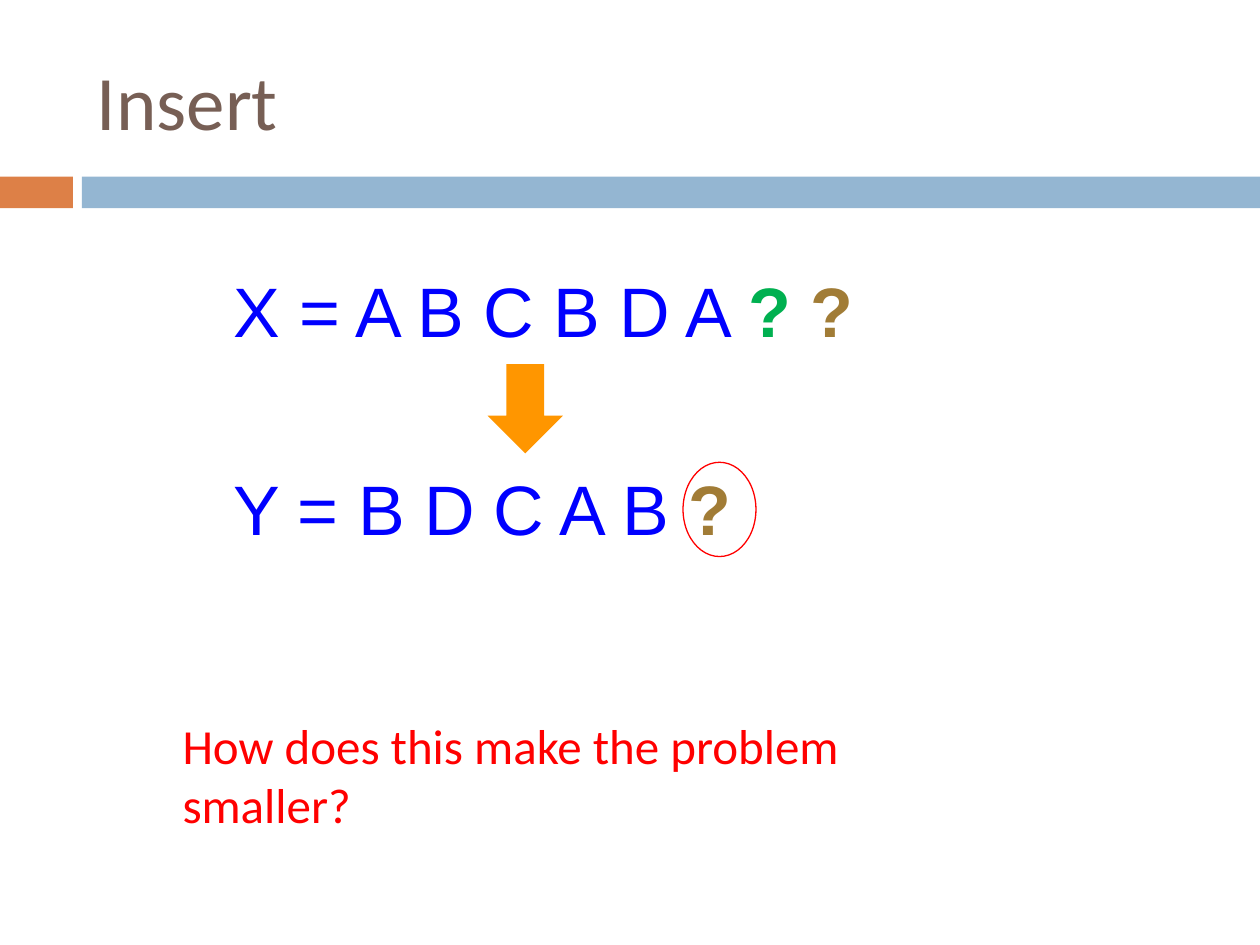
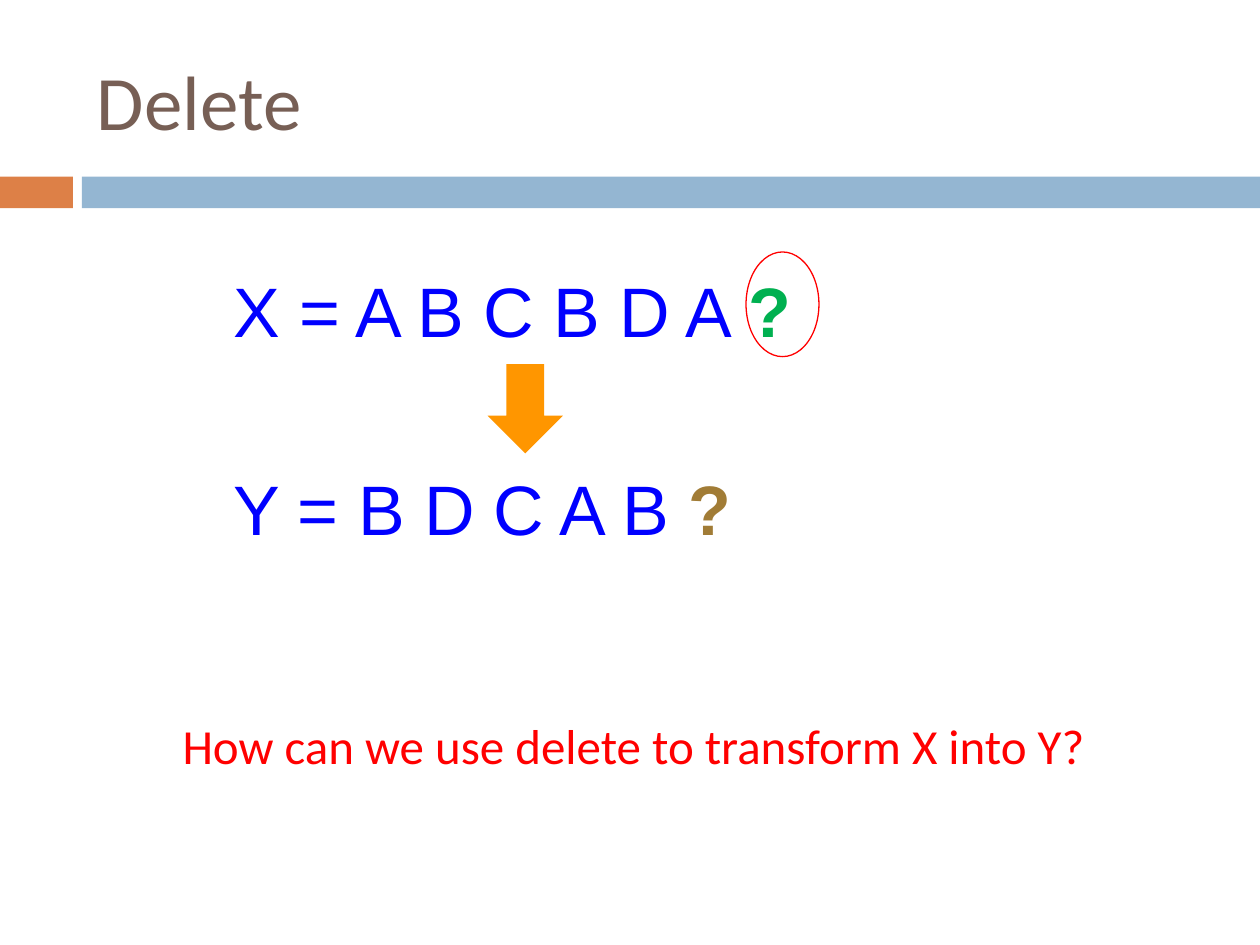
from dataclasses import dataclass

from pptx import Presentation
from pptx.dml.color import RGBColor
from pptx.enum.shapes import MSO_SHAPE
from pptx.enum.text import MSO_ANCHOR, MSO_AUTO_SIZE, PP_ALIGN
from pptx.util import Cm, Pt

COLORS = {
    "title": "775F55",
    "orange": "DD8047",
    "blue": "94B6D2",
    "letters": "0000FF",
    "green": "00B050",
    "brown": "A17C36",
    "arrow": "FF9600",
    "red": "FF0000",
}
TITLE_ONLY = 5
SEQUENCE_LEFT = 4.45
X_TOP, Y_TOP = 5.26, 9.27


@dataclass(frozen=True)
class Box:
    left: float
    top: float
    width: float
    height: float

    def lengths(self) -> tuple:
        return Cm(self.left), Cm(self.top), Cm(self.width), Cm(self.height)


@dataclass(frozen=True)
class Mark:
    text: str
    color: str


@dataclass(frozen=True)
class EditStep:
    title: str
    x_marks: tuple[Mark, ...]
    x_width: float
    circle: Box
    question: str
    question_width: float


TITLE_BOX = Box(1.7, 0.64, 22.66, 2.74)
BANDS = (
    (Box(0, 3.56, 1.47, 0.64), "orange"),
    (Box(1.65, 3.56, 23.75, 0.64), "blue"),
)
ARROW_BOX = Box(9.83, 7.34, 1.52, 1.8)
STEPS = (
    EditStep(
        "Insert",
        (Mark("? ", "green"), Mark("?", "brown")),
        13.92,
        Box(13.77, 9.32, 1.47, 1.9),
        "How does this make the problem smaller?",
        16.89,
    ),
    EditStep(
        "Delete",
        (Mark("?", "green"),),
        12.27,
        Box(15.04, 5.08, 1.47, 2.11),
        "How can we use delete to transform X into Y?",
        18.77,
    ),
)


def rgb(name: str) -> RGBColor:
    return RGBColor.from_string(COLORS[name])


def add_run(p, text: str, *, size: int, color: str, font: str = "Calibri", bold: bool = False) -> None:
    r = p.add_run()
    r.text = text
    r.font.name = font
    r.font.size = Pt(size)
    r.font.bold = bold
    r.font.color.rgb = rgb(color)


def add_title(s, text: str) -> None:
    sp = s.shapes.title
    sp.left, sp.top, sp.width, sp.height = TITLE_BOX.lengths()
    tf = sp.text_frame
    tf.vertical_anchor = MSO_ANCHOR.MIDDLE
    p = tf.paragraphs[0]
    p.alignment = PP_ALIGN.LEFT
    add_run(p, text, size=44, color="title")


def add_figure(s, kind: MSO_SHAPE, box: Box, *, fill: str | None = None, line: str | None = None) -> None:
    sp = s.shapes.add_shape(kind, *box.lengths())
    sp.shadow.inherit = False
    if fill:
        sp.fill.solid()
        sp.fill.fore_color.rgb = rgb(fill)
    else:
        sp.fill.background()
    if line:
        sp.line.color.rgb = rgb(line)
        sp.line.width = Pt(0.75)
    else:
        sp.line.fill.background()


def add_text_box(s, box: Box):
    tf = s.shapes.add_textbox(*box.lengths()).text_frame
    tf.word_wrap = True
    tf.auto_size = MSO_AUTO_SIZE.SHAPE_TO_FIT_TEXT
    return tf.paragraphs[0]


def add_sequence(s, letters: str, marks: tuple[Mark, ...], top: float, width: float) -> None:
    p = add_text_box(s, Box(SEQUENCE_LEFT, top, width, 1.96))
    p.space_before = Pt(3)
    add_run(p, letters, size=40, color="letters", font="Arial")
    for mark in marks:
        add_run(p, mark.text, size=40, color=mark.color, font="Arial", bold=True)


def add_step(prs, step: EditStep) -> None:
    s = prs.slides.add_slide(prs.slide_layouts[TITLE_ONLY])
    for box, color in BANDS:
        add_figure(s, MSO_SHAPE.RECTANGLE, box, fill=color)
    add_title(s, step.title)
    add_sequence(s, "X = A B C B D A ", step.x_marks, X_TOP, step.x_width)
    add_sequence(s, "Y = B D C A B ", (Mark("?", "brown"),), Y_TOP, 13.13)
    add_figure(s, MSO_SHAPE.OVAL, step.circle, line="red")
    add_figure(s, MSO_SHAPE.DOWN_ARROW, ARROW_BOX, fill="arrow")
    p = add_text_box(s, Box(3.43, 14.3, step.question_width, 1.45))
    add_run(p, step.question, size=28, color="red")


def main() -> None:
    prs = Presentation()
    prs.slide_width, prs.slide_height = Cm(25.4), Cm(19.05)
    for step in STEPS:
        add_step(prs, step)
    prs.save("out.pptx")


if __name__ == "__main__":
    main()
